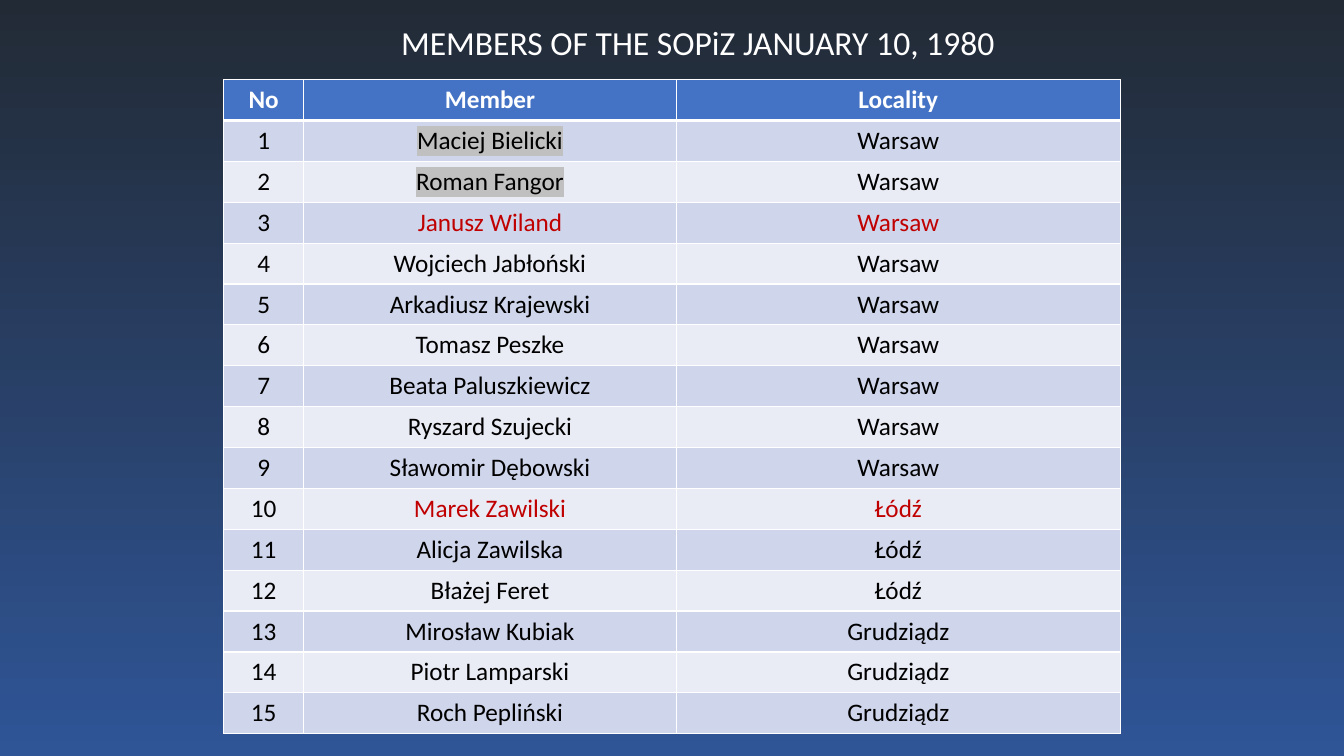
import pptx
import pptx.dml.color
import pptx.enum.text
import pptx.oxml
import pptx.oxml.ns
import pptx.util

Inches = pptx.util.Inches
RGBColor = pptx.dml.color.RGBColor

WHITE = RGBColor(0xFF, 0xFF, 0xFF)
BLACK = RGBColor(0x00, 0x00, 0x00)
RED = RGBColor(0xC0, 0x00, 0x00)
GRAY = RGBColor(0xC0, 0xC0, 0xC0)
HEADER_BLUE = RGBColor(0x44, 0x72, 0xC4)
BAND_DARK = RGBColor(0xCF, 0xD5, 0xEA)
BAND_LIGHT = RGBColor(0xE9, 0xEB, 0xF5)
NIGHT = RGBColor(0x22, 0x2A, 0x35)
DUSK = RGBColor(0x2F, 0x55, 0x97)

TITLE = "MEMBERS OF THE SOPiZ JANUARY 10, 1980"
HEADINGS = ("No", "Member", "Locality")
MEMBERS_BY_LOCALITY = {
    "Warsaw": (
        "Maciej Bielicki", "Roman Fangor", "Janusz Wiland",
        "Wojciech Jabłoński", "Arkadiusz Krajewski", "Tomasz Peszke",
        "Beata Paluszkiewicz", "Ryszard Szujecki", "Sławomir Dębowski",
    ),
    "Łódź": ("Marek Zawilski", "Alicja Zawilska", "Błażej Feret"),
    "Grudziądz": ("Mirosław Kubiak", "Piotr Lamparski", "Roch Pepliński"),
}
HIGHLIGHTED = {"Maciej Bielicki", "Roman Fangor"}
IN_RED = {"Janusz Wiland", "Marek Zawilski"}

COLUMN_WIDTHS = (0.79, 3.7, 4.4)
TABLE_HEIGHT = 6.48


def format_font(font, color, **values):
    font.color.rgb = color
    for name, value in {"name": "Calibri", "bold": False, **values}.items():
        setattr(font, name, value)


def highlight(run, color):
    mark = pptx.oxml.parse_xml(
        f'<a:highlight {pptx.oxml.ns.nsdecls("a")}>'
        f'<a:srgbClr val="{color}"/></a:highlight>'
    )
    fill = run.font._element.find(pptx.oxml.ns.qn("a:solidFill"))
    fill.addnext(mark)


def set_borders(cell, widths):
    """Draw white borders; widths maps each side to points."""
    properties = cell._tc.get_or_add_tcPr()
    for position, (side, width) in enumerate(widths.items()):
        properties.insert(position, pptx.oxml.parse_xml(
            f'<a:ln{side} {pptx.oxml.ns.nsdecls("a")} w="{pptx.util.Pt(width)}">'
            f'<a:solidFill><a:srgbClr val="{WHITE}"/></a:solidFill></a:ln{side}>'
        ))


def fill_cell(cell, text, fill, color, bold=False, top=1, bottom=1):
    cell.fill.solid()
    cell.fill.fore_color.rgb = fill
    set_borders(cell, {"L": 1, "R": 1, "T": top, "B": bottom})
    paragraph = cell.text_frame.paragraphs[0]
    paragraph.alignment = pptx.enum.text.PP_ALIGN.CENTER
    run = paragraph.add_run()
    run.text = text
    format_font(run.font, color, size=pptx.util.Pt(18), bold=bold)
    if text in HIGHLIGHTED:
        highlight(run, GRAY)


def set_background(slide):
    fill = slide.background.fill
    fill.gradient()
    fill.gradient_angle = 270
    for stop, color in zip(fill.gradient_stops, (NIGHT, DUSK)):
        stop.color.rgb = color


def add_title(slide):
    title = slide.shapes.add_textbox(
        Inches(3.88), Inches(0.17), Inches(6.14), Inches(0.5))
    title.text_frame.word_wrap = False
    title.text_frame.auto_size = pptx.enum.text.MSO_AUTO_SIZE.SHAPE_TO_FIT_TEXT
    run = title.text_frame.paragraphs[0].add_run()
    run.text = TITLE
    format_font(run.font, WHITE, size=pptx.util.Pt(24))


def add_member_table(slide):
    members = [(name, locality)
               for locality, names in MEMBERS_BY_LOCALITY.items()
               for name in names]
    row_count = len(members) + 1
    table = slide.shapes.add_table(
        row_count, len(HEADINGS), Inches(2.22), Inches(0.79),
        Inches(sum(COLUMN_WIDTHS)), Inches(TABLE_HEIGHT)).table
    for column, width in zip(table.columns, COLUMN_WIDTHS):
        column.width = Inches(width)
    for row in table.rows:
        row.height = Inches(TABLE_HEIGHT / row_count)

    # Header row
    for column, heading in enumerate(HEADINGS):
        fill_cell(table.cell(0, column), heading, HEADER_BLUE, WHITE,
                  bold=True, bottom=3)

    # Numbered members in alternating bands
    for number, (name, locality) in enumerate(members, start=1):
        band = BAND_DARK if number % 2 else BAND_LIGHT
        color = RED if name in IN_RED else BLACK
        top = 3 if number == 1 else 1
        entries = ((str(number), BLACK), (name, color), (locality, color))
        for column, (text, text_color) in enumerate(entries):
            fill_cell(table.cell(number, column), text, band, text_color, top=top)


def main():
    presentation = pptx.Presentation()
    presentation.slide_width = Inches(13.33)
    presentation.slide_height = Inches(7.5)
    slide = presentation.slides.add_slide(presentation.slide_layouts[6])
    set_background(slide)
    add_member_table(slide)
    add_title(slide)
    presentation.save("out.pptx")


if __name__ == "__main__":
    main()
